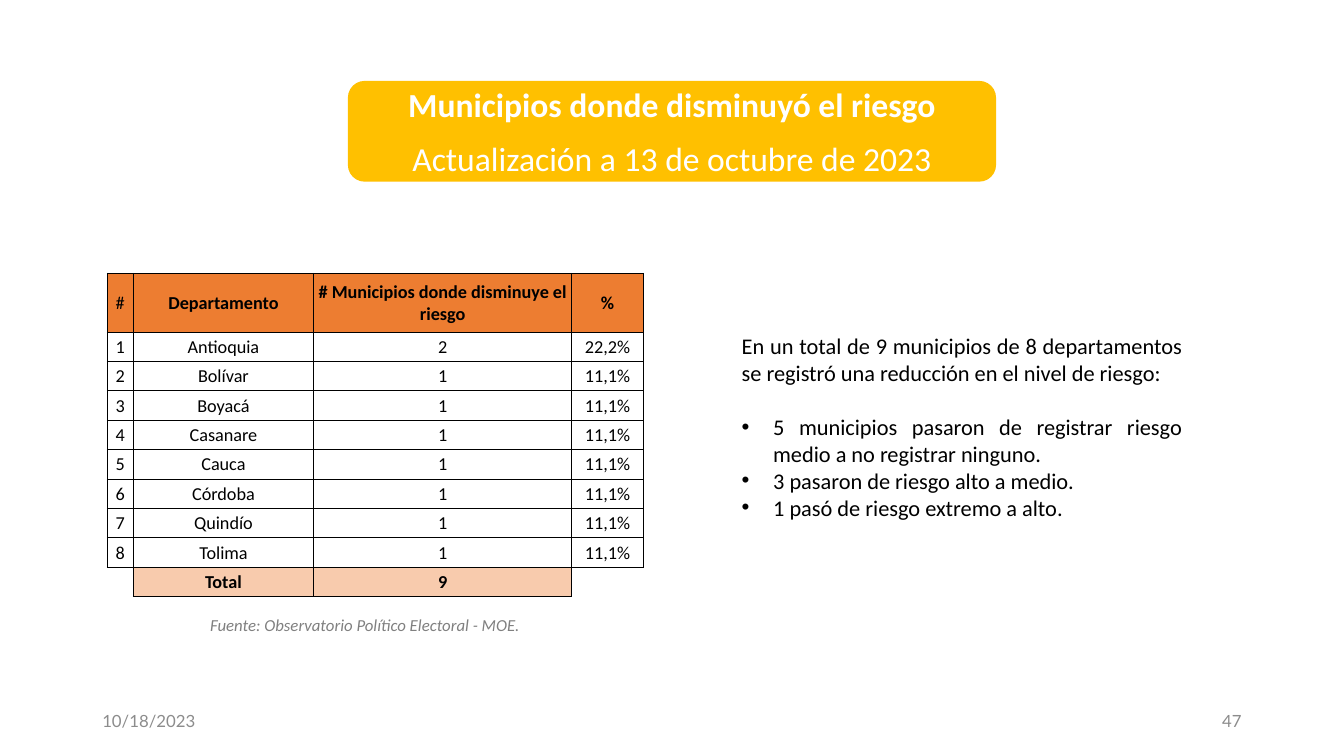
"""Builds the slide on municipalities where electoral risk fell."""
from dataclasses import dataclass

from lxml.etree import SubElement
from pptx import Presentation
from pptx.dml.color import RGBColor
from pptx.enum.shapes import MSO_SHAPE
from pptx.enum.text import MSO_ANCHOR, PP_ALIGN
from pptx.oxml.ns import qn
from pptx.util import Pt

ROUND = MSO_SHAPE.ROUNDED_RECTANGLE
TOP, MID = MSO_ANCHOR.TOP, MSO_ANCHOR.MIDDLE
LEFT, MIDDLE, RIGHT, JUST = (
    PP_ALIGN.LEFT, PP_ALIGN.CENTER, PP_ALIGN.RIGHT, PP_ALIGN.JUSTIFY)


@dataclass(frozen=True)
class Theme:
    """Fonts, colours and type sizes."""
    body: str = "Calibri"
    foot: str = "Lato"
    ink: str = "000000"
    white: str = "FFFFFF"
    gray: str = "8C8C8C"
    note: str = "808080"
    gold: str = "FFC000"
    head: str = "ED7D31"
    total: str = "F8CBAD"
    title_pt: int = 24
    text_pt: int = 16
    cell_pt: int = 13
    small_pt: int = 12


THEME = Theme()

TITLE = ["Municipios donde disminuyó el riesgo",
         "Actualización a 13 de octubre de 2023"]
HEAD = ["#", "Departamento", "# Municipios donde disminuye el riesgo", "%"]
DEPTS = [
    ("Antioquia", "2", "22,2%"),
    ("Bolívar", "1", "11,1%"),
    ("Boyacá", "1", "11,1%"),
    ("Casanare", "1", "11,1%"),
    ("Cauca", "1", "11,1%"),
    ("Córdoba", "1", "11,1%"),
    ("Quindío", "1", "11,1%"),
    ("Tolima", "1", "11,1%"),
]
TOTAL = ["", "Total", "9", ""]
INTRO = ("En un total de 9 municipios de 8 departamentos "
         "se registró una reducción en el nivel de riesgo:")
POINTS = ["5 municipios pasaron de registrar riesgo medio a no registrar ninguno.",
          "3 pasaron de riesgo alto a medio.",
          "1 pasó de riesgo extremo a alto."]
SOURCE = "Fuente: Observatorio Político Electoral - MOE."
DATE, PAGE = "10/18/2023", "47"

COLS = [18.6, 129, 184.2, 51.2]
HEAD_H, ROW_H = 42, 21
INDENT = 22.5


def style(para, size, color, align, face=THEME.body, bold=False, italic=False):
    """Set alignment and font of one paragraph."""
    para.alignment = align
    font = para.font
    font.name, font.size = face, Pt(size)
    font.bold, font.italic = bold, italic
    font.color.rgb = RGBColor.from_string(color)


def add_text(slide, box, lines, anchor=TOP):
    """Add a wrapped text box and return its paragraphs."""
    frame = slide.shapes.add_textbox(*map(Pt, box)).text_frame
    frame.word_wrap = True
    frame.vertical_anchor = anchor
    frame.text = "\n".join(lines)
    return frame.paragraphs


def add_title(slide):
    """Add the gold banner."""
    shape = slide.shapes.add_shape(ROUND, Pt(248.5), Pt(57.8), Pt(463), Pt(72))
    shape.shadow.inherit = False
    shape.fill.solid()
    shape.fill.fore_color.rgb = RGBColor.from_string(THEME.gold)
    shape.line.fill.background()
    frame = shape.text_frame
    frame.vertical_anchor = MID
    frame.text = "\n".join(TITLE)
    for num, para in enumerate(frame.paragraphs):
        style(para, THEME.title_pt, THEME.white, MIDDLE, bold=num == 0)
        para.space_after = Pt(10)


def add_lines(cell, sides):
    """Draw thin lines on the named sides and none on the others."""
    props = cell._tc.get_or_add_tcPr()
    for side in "LRTB":
        line = SubElement(props, qn(f"a:ln{side}"), w=str(Pt(0.5)))
        if side in sides:
            fill = SubElement(line, qn("a:solidFill"))
            SubElement(fill, qn("a:srgbClr"), val=THEME.ink)
        else:
            SubElement(line, qn("a:noFill"))


def fill_cell(cell, text, sides, color, bold):
    """Write and format one table cell."""
    add_lines(cell, sides)
    if color:
        cell.fill.solid()
        cell.fill.fore_color.rgb = RGBColor.from_string(color)
    else:
        cell.fill.background()
    cell.margin_left = cell.margin_right = cell.margin_top = Pt(0.7)
    cell.margin_bottom = 0
    cell.vertical_anchor = MID
    cell.text = text
    para = cell.text_frame.paragraphs[0]
    style(para, THEME.cell_pt, THEME.ink, MIDDLE, bold=bold)
    if not text:
        SubElement(para._p, qn("a:endParaRPr"), sz=str(THEME.cell_pt * 100))


def add_grid(slide):
    """Add the table of departments."""
    rows = [HEAD]
    rows += [[str(num), *dept] for num, dept in enumerate(DEPTS, 1)]
    rows.append(TOTAL)
    last = len(rows) - 1
    high = HEAD_H + ROW_H * last
    table = slide.shapes.add_table(
        len(rows), len(COLS), Pt(76.5), Pt(195.2), Pt(sum(COLS)), Pt(high)).table
    table.first_row = table.horz_banding = False
    for col, width in zip(table.columns, COLS):
        col.width = Pt(width)
    for r, row in enumerate(rows):
        table.rows[r].height = Pt(ROW_H if r else HEAD_H)
        tint = {0: THEME.head, last: THEME.total}.get(r)
        for c, text in enumerate(row):
            sides = "LRTB" if text else ("TR" if c == 0 else "TL")
            bold = r in (0, last) and text != "#"
            fill_cell(table.cell(r, c), text, sides, tint if text else None, bold)


def add_facts(slide):
    """Add the summary with its bullets."""
    paras = add_text(slide, (522.7, 234, 329, 143.3), [INTRO, *POINTS])
    for num, para in enumerate(paras):
        if num:
            props = para._p.get_or_add_pPr()
            props.set("marL", str(Pt(INDENT)))
            props.set("indent", str(-Pt(INDENT)))
            SubElement(props, qn("a:buFont"), typeface="Arial")
            SubElement(props, qn("a:buChar"), char="•")
        style(para, THEME.text_pt, THEME.ink, JUST)
    paras[1].space_before = Pt(THEME.text_pt * 1.2)


def main():
    """Build and save the slide."""
    deck = Presentation()
    deck.slide_width, deck.slide_height = Pt(960), Pt(540)
    slide = deck.slides.add_slide(deck.slide_layouts[6])
    for left, text, align in ((66, DATE, LEFT), (678, PAGE, RIGHT)):
        para = add_text(slide, (left, 500.5, 216, 28.8), [text], MID)[0]
        style(para, THEME.small_pt, THEME.gray, align, THEME.foot)
    add_title(slide)
    add_facts(slide)
    note = add_text(slide, (66, 433.5, 389.5, 22.3), [SOURCE])[0]
    style(note, THEME.small_pt, THEME.note, MIDDLE, italic=True)
    note.line_spacing = 1.15
    add_grid(slide)
    deck.save("out.pptx")


if __name__ == "__main__":
    main()
